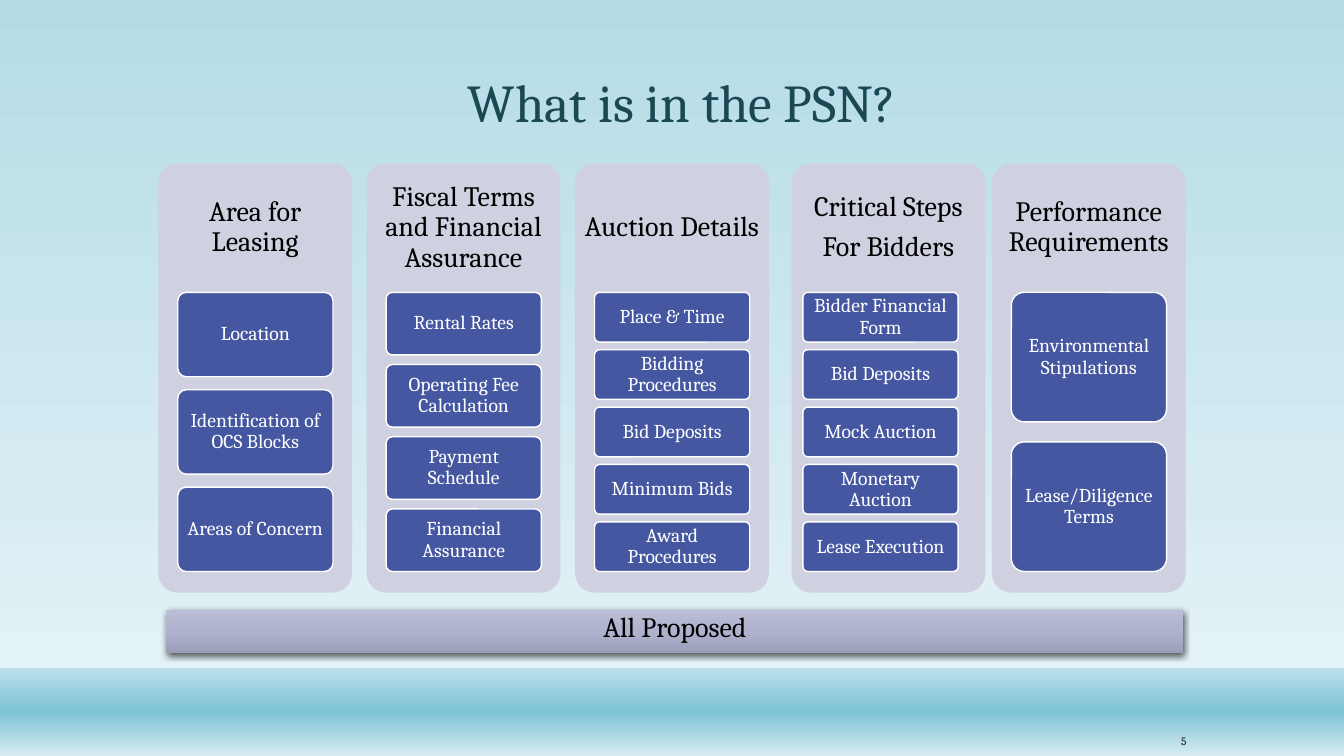
"""Builds the slide that lists the contents of the PSN in five columns."""
import dataclasses

import lxml.etree
import pptx
import pptx.dml.color
import pptx.enum.shapes
import pptx.enum.text
import pptx.oxml.ns
import pptx.util

SHAPE = pptx.enum.shapes.MSO_SHAPE
ALIGN = pptx.enum.text.PP_ALIGN
ANCHOR = pptx.enum.text.MSO_ANCHOR
qn = pptx.oxml.ns.qn


@dataclasses.dataclass(frozen=True)
class Theme:
    font: str = "Cambria"
    title_size: int = 38
    heading_size: int = 20
    card_size: int = 14
    number_size: int = 8
    title: str = "1B4855"
    dark: str = "000000"
    light: str = "FFFFFF"
    panel: str = "CFD1E0"
    card: str = "4557A1"
    sky: tuple = ((0, "B4DCE7"), (88, "E3F2F6"), (100, "E3F2F6"))
    sea: tuple = ((0, "BCE0EA"), (49, "7DC2D6"), (100, "D6ECF2"))
    bar: tuple = ((0, "BBBDD4"), (50, "B0B3CE"), (100, "9A9EB9"))


THEME = Theme()
WIDTH = pptx.util.Inches(13.333)
HEIGHT = pptx.util.Inches(7.5)

FIRST_LEFT, LAST_LEFT = 11.78, 73.8
PANEL_TOP, PANEL_WIDTH, PANEL_HEIGHT = 21.6, 14.42, 56.8
CARD_INDENT, CARD_WIDTH = 1.45, 11.55
CARDS_TOP, CARDS_HEIGHT = 38.67, 36.93
GAP_RATIO = 0.154

COLUMNS = [
    (["Area for Leasing"], 0,
     ["Location", "Identification of OCS Blocks", "Areas of Concern"]),
    (["Fiscal Terms and Financial Assurance"], 0,
     ["Rental Rates", "Operating Fee Calculation", "Payment Schedule", "Financial Assurance"]),
    (["Auction Details"], 0,
     ["Place & Time", "Bidding Procedures", "Bid Deposits", "Minimum Bids", "Award Procedures"]),
    (["Critical Steps", "For Bidders"], 0.6,
     ["Bidder Financial Form", "Bid Deposits", "Mock Auction", "Monetary Auction",
      "Lease Execution"]),
    (["Performance Requirements"], 0,
     ["Environmental Stipulations", "Lease/Diligence Terms"]),
]


def color(code):
    """Return the colour object for a hex code."""
    return pptx.dml.color.RGBColor.from_string(code)


def assign(target, values):
    """Set every attribute named in a dict of format values."""
    for name, value in values.items():
        setattr(target, name, value)


def area(left, top, width, height):
    """Turn percentages of the slide into left, top, width and height."""
    return [int(size * share / 100) for size, share in
            ((WIDTH, left), (HEIGHT, top), (WIDTH, width), (HEIGHT, height))]


def paint_gradient(fill, element, stops):
    """Fill from top to bottom with the given percentage and colour stops."""
    fill.gradient()
    fill.gradient_angle = 270
    stop_list = next(element.iter(qn("a:gsLst")))
    for stop in list(stop_list):
        stop_list.remove(stop)
    for percent, code in stops:
        stop = lxml.etree.SubElement(stop_list, qn("a:gs"), pos=str(percent * 1000))
        lxml.etree.SubElement(stop, qn("a:srgbClr"), val=code)


def cast_shadow(box):
    """Give a shape a soft shadow straight below it."""
    effects = box._element.spPr.find(qn("a:effectLst"))
    outer = lxml.etree.SubElement(effects, qn("a:outerShdw"), blurRad="57150", dist="19050",
                                  dir="5400000", algn="ctr", rotWithShape="0")
    tint = lxml.etree.SubElement(outer, qn("a:srgbClr"), val=THEME.dark)
    lxml.etree.SubElement(tint, qn("a:alpha"), val="63000")


def write(box, lines, size, code, insets=(0.1, 0.05, 0.1, 0.05), anchor=ANCHOR.MIDDLE,
          align=ALIGN.CENTER, spacing=0.9):
    """Write formatted paragraphs into a shape, with insets in inches."""
    frame = box.text_frame
    sides = ("margin_left", "margin_top", "margin_right", "margin_bottom")
    assign(frame, {"word_wrap": True, "vertical_anchor": anchor,
                   "auto_size": pptx.enum.text.MSO_AUTO_SIZE.NONE})
    assign(frame, {side: pptx.util.Inches(inset) for side, inset in zip(sides, insets)})
    frame.text = "\n".join(lines)
    for para in frame.paragraphs:
        assign(para, {"alignment": align, "line_spacing": spacing,
                      "space_before": pptx.util.Pt(0),
                      "space_after": pptx.util.Pt(size * 0.35)})
        for span in para.runs:
            assign(span.font, {"name": THEME.font, "size": pptx.util.Pt(size)})
            span.font.color.rgb = color(code)


def add_block(page, kind, place, fill, outline=None):
    """Add a preset shape with a plain or gradient fill."""
    box = page.shapes.add_shape(kind, *area(*place))
    box.shadow.inherit = False
    if kind == SHAPE.ROUNDED_RECTANGLE:
        box.adjustments[0] = 0.1
    if isinstance(fill, str):
        box.fill.solid()
        box.fill.fore_color.rgb = color(fill)
    else:
        paint_gradient(box.fill, box._element, fill)
    if outline:
        box.line.color.rgb = color(outline)
        box.line.width = pptx.util.Pt(1)
    else:
        box.line.fill.background()
    return box


def add_column(page, left, heading, shift, cards):
    """Add a headed panel and spread its cards evenly down it."""
    panel = add_block(page, SHAPE.ROUNDED_RECTANGLE,
                      (left + shift, PANEL_TOP, PANEL_WIDTH, PANEL_HEIGHT), THEME.panel)
    write(panel, heading, THEME.heading_size, THEME.dark, insets=(0.02, 0.02, 0.02, 3))
    height = CARDS_HEIGHT / (len(cards) + (len(cards) - 1) * GAP_RATIO)
    for row, label in enumerate(cards):
        top = CARDS_TOP + row * height * (1 + GAP_RATIO)
        card = add_block(page, SHAPE.ROUNDED_RECTANGLE,
                         (left + CARD_INDENT, top, CARD_WIDTH, height), THEME.card, THEME.light)
        write(card, [label], THEME.card_size, THEME.light, insets=(0.04, 0.03, 0.04, 0.03))


def add_title(page, text):
    """Move and format the title placeholder."""
    title = page.shapes.title
    assign(title, dict(zip(("left", "top", "width", "height"),
                           area(3.45, 2.53, 94.58, 15.87))))
    write(title, [text], THEME.title_size, THEME.title, anchor=ANCHOR.BOTTOM)


def add_bar(page, text):
    """Add the shaded bar below the columns."""
    bar = add_block(page, SHAPE.RECTANGLE, (12.38, 80.67, 75.68, 5.73), THEME.bar)
    cast_shadow(bar)
    write(bar, [text], THEME.heading_size, THEME.dark, insets=(0.1, 0, 0.1, 0),
          anchor=ANCHOR.TOP, spacing=1.0)


def add_number(page, text):
    """Add the page number at the lower right."""
    box = page.shapes.add_textbox(*area(83.78, 96.27, 5.25, 3.47))
    write(box, [text], THEME.number_size, THEME.dark, align=ALIGN.RIGHT, spacing=1.0)


def main():
    """Build the slide and save it."""
    deck = pptx.Presentation()
    assign(deck, {"slide_width": WIDTH, "slide_height": HEIGHT})
    page = deck.slides.add_slide(deck.slide_layouts[5])
    paint_gradient(page.background.fill, page._element, THEME.sky)
    add_block(page, SHAPE.RECTANGLE, (0, 88.4, 100, 11.6), THEME.sea)
    add_title(page, "What is in the PSN?")
    pitch = (LAST_LEFT - FIRST_LEFT) / (len(COLUMNS) - 1)
    for index, (heading, shift, cards) in enumerate(COLUMNS):
        add_column(page, FIRST_LEFT + index * pitch, heading, shift, cards)
    add_bar(page, "All Proposed")
    add_number(page, "5")
    deck.save("out.pptx")


if __name__ == "__main__":
    main()
